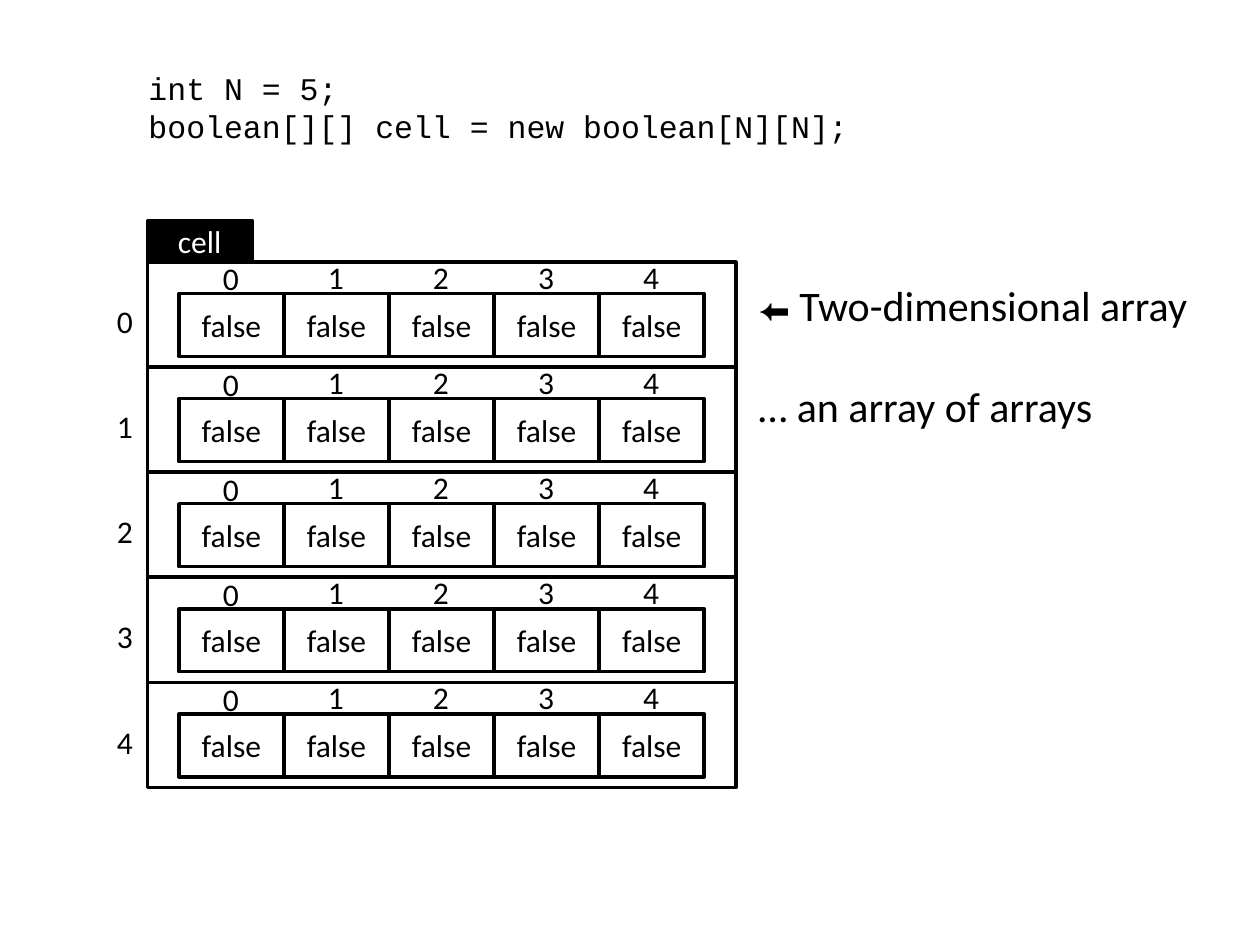
from pptx import Presentation
from pptx.dml.color import RGBColor
from pptx.enum.shapes import MSO_SHAPE
from pptx.enum.text import MSO_ANCHOR, MSO_AUTO_SIZE, PP_ALIGN
from pptx.util import Inches, Pt

RECT = MSO_SHAPE.RECTANGLE
MIDDLE = MSO_ANCHOR.MIDDLE
CENTER = PP_ALIGN.CENTER
GROW = MSO_AUTO_SIZE.SHAPE_TO_FIT_TEXT
COLORS = {"ink": "000000", "paper": "FFFFFF"}
COUNT = 5


def color(name):
    return RGBColor.from_string(COLORS[name])


def write(frame, lines, size=18, font="Calibri", ink="ink", align=None, gap=0):
    """Fill a frame; a line is a string or a list of (text, size) runs."""
    for i, line in enumerate(lines):
        para = frame.paragraphs[0] if i == 0 else frame.add_paragraph()
        para.alignment = align
        if i and gap:
            para.space_before = Pt(gap)
        runs = [(line, size)] if isinstance(line, str) else line
        for text, points in runs:
            run = para.add_run()
            run.text = text
            run.font.size = Pt(points)
            run.font.name = font
            run.font.color.rgb = color(ink)


def label(shapes, box, lines, **style):
    frame = shapes.add_textbox(*box).text_frame
    frame.word_wrap = False
    frame.auto_size = GROW
    write(frame, lines, **style)


def block(shapes, box, text=None, fill="paper", ink="ink"):
    shape = shapes.add_shape(RECT, *box)
    shape.shadow.inherit = False
    shape.fill.solid()
    shape.fill.fore_color.rgb = color(fill)
    shape.line.color.rgb = color("ink")
    shape.line.width = Pt(2)
    if text:
        shape.text_frame.vertical_anchor = MIDDLE
        write(shape.text_frame, [text], ink=ink, align=CENTER)


def draw_row(slide, box):
    """One inner array: a frame, its cells and the index above each cell."""
    left, top, width, height = box
    shapes = slide.shapes.add_group_shape().shapes
    block(shapes, box)
    pad = Inches(0.25)
    step = (width - 2 * pad) // COUNT
    spots = [left + pad + i * step for i in range(COUNT)]
    for x in spots:
        block(shapes, (x, top + pad, step, Inches(0.5)), "false")
    for i, x in enumerate(spots):
        rise = Inches(0.07 if i == 0 else 0.08)
        label(shapes, (x + pad, top - rise, Inches(0.33), Inches(0.4)), [str(i)])


def draw_grid(slide, box):
    """The outer array: name tab, row indexes and one inner array per row."""
    left, top, width, height = box
    step = height // COUNT
    tab = Inches(0.33)
    block(slide.shapes, (left, top - tab, Inches(0.83), tab), "cell",
          fill="ink", ink="paper")
    for i in range(COUNT):
        y = top + i * step
        label(slide.shapes,
              (left - Inches(0.34), y + Inches(0.27), Inches(0.33), Inches(0.4)),
              [str(i)])
        draw_row(slide, (left, y, width, step))


def draw_code(slide, box):
    label(slide.shapes, box,
          ["int N = 5;", "boolean[][] cell = new boolean[N][N];"],
          font="Courier New")


def draw_note(slide, box):
    label(slide.shapes, box,
          [[("⬅", 18), (" Two-dimensional array", 24)], "… an array of arrays"],
          size=24, gap=29)


def main():
    deck = Presentation()
    deck.slide_width, deck.slide_height = Inches(10), Inches(7.5)
    slide = deck.slides.add_slide(deck.slide_layouts[6])
    draw_code(slide, (Inches(1.08), Inches(0.5), Inches(5.78), Inches(0.71)))
    draw_note(slide, (Inches(5.92), Inches(2.17), Inches(3.72), Inches(1.31)))
    draw_grid(slide, (Inches(1.17), Inches(2.08), Inches(4.67), Inches(4.17)))
    deck.save("out.pptx")


if __name__ == "__main__":
    main()
